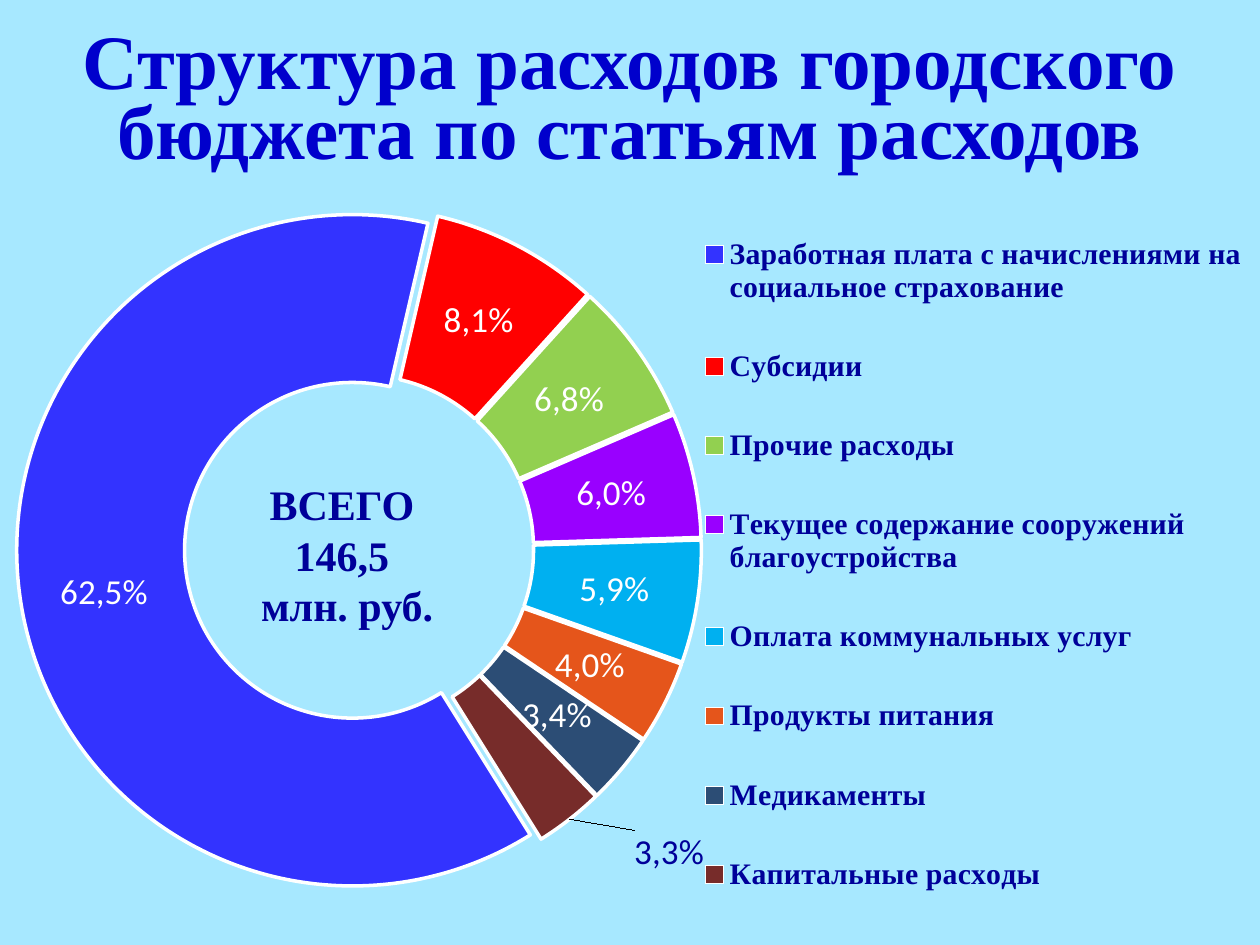
from lxml.etree import SubElement
from pptx import Presentation
from pptx.chart.data import CategoryChartData
from pptx.dml.color import RGBColor
from pptx.enum.chart import XL_CHART_TYPE, XL_LEGEND_POSITION
from pptx.enum.text import MSO_ANCHOR, PP_ALIGN
from pptx.oxml.ns import qn
from pptx.util import Cm, Pt

NAVY = "000099"


def write(tf, text, size, color, font, bold=False, spacing=None):
    """Fill a text frame with centred lines in one format."""
    for i, line in enumerate(text.split("\n")):
        p = tf.add_paragraph() if i else tf.paragraphs[0]
        p.alignment = PP_ALIGN.CENTER
        p.line_spacing = spacing
        r = p.add_run()
        r.text = line
        r.font.size, r.font.bold, r.font.name = Pt(size), bold, font
        r.font.color.rgb = RGBColor.from_string(color)


def set_layout(parent, index, **values):
    """Place a chart part by fractions of the chart area."""
    for old in parent.findall(qn("c:layout")):
        parent.remove(old)
    layout = SubElement(parent, qn("c:layout"))
    parent.insert(index, layout)
    manual = SubElement(layout, qn("c:manualLayout"))
    for tag, value in values.items():
        SubElement(manual, qn(f"c:{tag}")).set("val", str(value))


prs = Presentation()
prs.slide_width, prs.slide_height = Cm(25.4), Cm(19.05)
slide = prs.slides.add_slide(prs.slide_layouts[6])
slide.background.fill.solid()
slide.background.fill.fore_color.rgb = RGBColor.from_string("A7E8FF")

# Title
sp = slide.shapes.add_textbox(Cm(1.27), Cm(0.53), Cm(22.86), Cm(3.18))
tf = sp.text_frame
tf.word_wrap = True
tf.vertical_anchor = MSO_ANCHOR.MIDDLE
write(tf, "Структура расходов городского бюджета по статьям расходов",
      44, "0000CC", "Times New Roman", bold=True, spacing=Pt(40))

# Expense items: name, share, colour
items = [
    ("Заработная плата с начислениями на социальное страхование", 0.625, "3333FF"),
    ("Субсидии", 0.081, "FF0000"),
    ("Прочие расходы", 0.068, "92D050"),
    ("Текущее содержание сооружений благоустройства", 0.06, "9900FF"),
    ("Оплата коммунальных услуг", 0.059, "00B0F0"),
    ("Продукты питания", 0.04, "E5551B"),
    ("Медикаменты", 0.034, "2C4D75"),
    ("Капитальные расходы", 0.033, "772C2A"),
]

# Doughnut chart
data = CategoryChartData(number_format="0.0%")
data.categories = [name for name, _, _ in items]
data.add_series("Расходы", [share for _, share, _ in items])
chart = slide.shapes.add_chart(XL_CHART_TYPE.DOUGHNUT, Cm(0), Cm(3.71),
                               Cm(25.4), Cm(15.34), data).chart
chart.has_title = False
chart.font.name, chart.font.size = "Calibri", Pt(10)
plot = chart.plots[0]
plot.vary_by_categories = True
series = plot.series[0]

# Slices with their labels
for i, (_, share, color) in enumerate(items):
    point = series.points[i]
    point.format.fill.solid()
    point.format.fill.fore_color.rgb = RGBColor.from_string(color)
    point.format.line.color.rgb = RGBColor.from_string("FFFFFF")
    point.format.line.width = Pt(2)
    last = i == len(items) - 1
    write(point.data_label.text_frame, f"{share:.1%}".replace(".", ","),
          20, NAVY if last else "FFFFFF", "Calibri")

# The last label stands outside the ring
labels = series.data_labels
labels.show_value = True
set_layout(labels._element.findall(qn("c:dLbl"))[-1], 1, x=0.12, y=0.13)

# Ring geometry
ring = plot._element
ring.find(qn("c:firstSliceAng")).set("val", "148")
ring.find(qn("c:holeSize")).set("val", "37")
explosion = SubElement(series._element, qn("c:explosion"))
explosion.set("val", "4")
series._element.find(qn("c:dPt")).addprevious(explosion)
set_layout(ring.getparent(), 0, layoutTarget="inner", xMode="edge", yMode="edge",
           x=0.01, y=0.03, w=0.55, h=0.9)

# Legend
chart.has_legend = True
legend = chart.legend
legend.position = XL_LEGEND_POSITION.RIGHT
legend.include_in_layout = False
legend.font.name, legend.font.size, legend.font.bold = "Times New Roman", Pt(17), True
legend.font.color.rgb = RGBColor.from_string(NAVY)
set_layout(legend._element, 1, xMode="edge", yMode="edge",
           x=0.56, y=0.01, w=0.43, h=0.98)

# Total in the middle of the ring
sp = slide.shapes.add_textbox(Cm(4.7), Cm(9.53), Cm(4.6), Cm(3.33))
sp.text_frame.word_wrap = True
write(sp.text_frame, "ВСЕГО \n146,5 \nмлн. руб.", 24, NAVY, "Times New Roman", bold=True)

prs.save("out.pptx")
